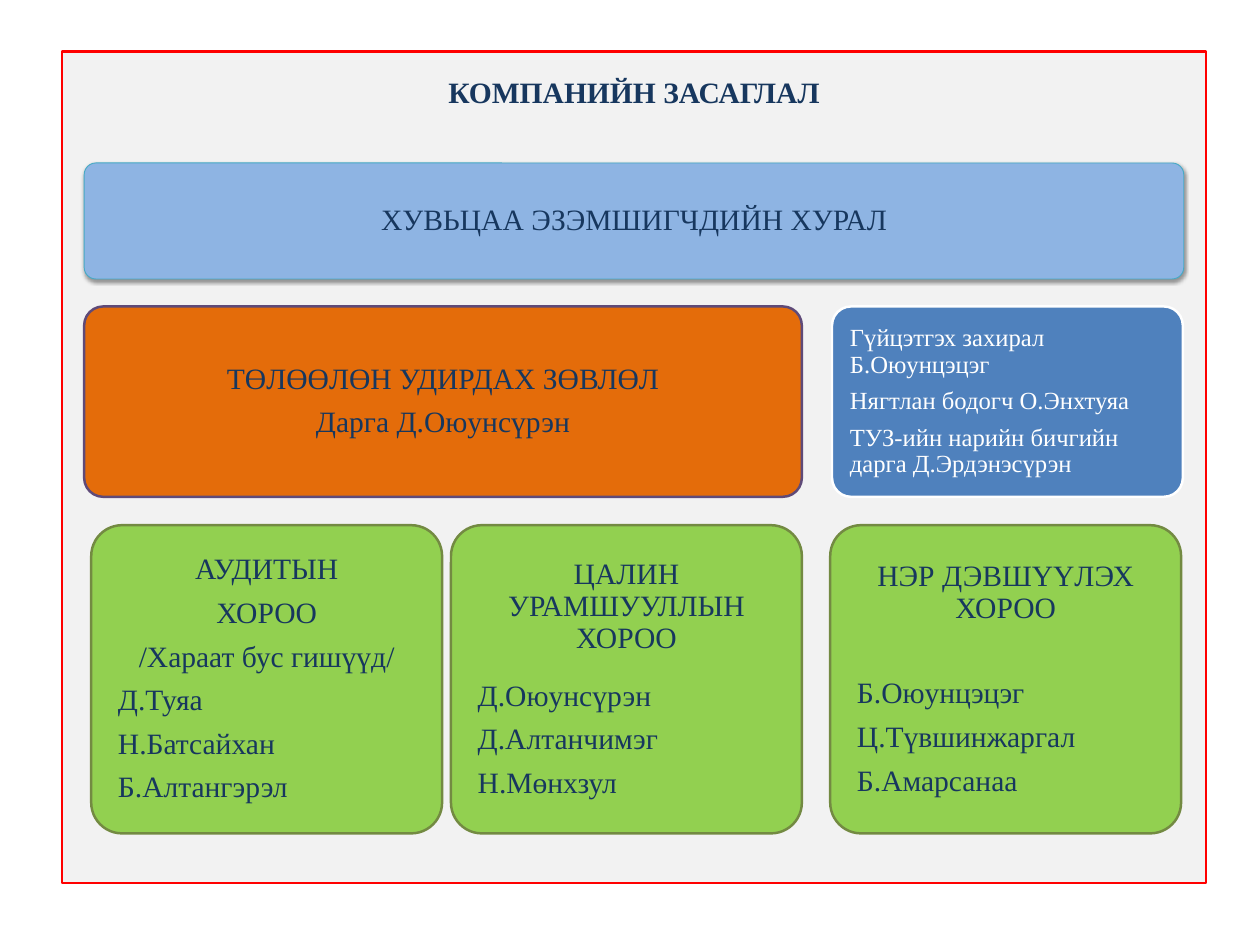
from lxml import etree
from pptx import Presentation
from pptx.dml.color import RGBColor
from pptx.enum.shapes import MSO_SHAPE
from pptx.enum.text import MSO_ANCHOR, MSO_AUTO_SIZE, PP_ALIGN
from pptx.oxml.ns import qn
from pptx.util import Inches, Pt

NAVY, WHITE, GREEN, OLIVE = "17375E", "FFFFFF", "92D050", "738A42"


def hue(code):
    return RGBColor.from_string(code)


def write(frame, lines, size=24, color=NAVY, bold=False, heads=0, gap=0,
          lead=1.0, split=None, pad=0.2, top=0.1, anchor=MSO_ANCHOR.MIDDLE):
    """Centre the first `heads` lines, left-align the rest; `split` is the gap after the heads."""
    frame.word_wrap = True
    frame.auto_size = MSO_AUTO_SIZE.NONE
    frame.vertical_anchor = anchor
    frame.margin_left = frame.margin_right = Inches(pad)
    frame.margin_top = frame.margin_bottom = Inches(top)
    for i, line in enumerate(lines):
        para = frame.paragraphs[0] if i == 0 else frame.add_paragraph()
        para.alignment = PP_ALIGN.CENTER if i < heads else PP_ALIGN.LEFT
        para.line_spacing = lead
        para.space_before = Pt(0)
        last = i == len(lines) - 1
        para.space_after = Pt(0 if last else split if split and i == heads - 1 else gap)
        run = para.add_run()
        run.text = line
        font = run.font
        font.name, font.size, font.bold = "Times New Roman", Pt(size), bold
        font.color.rgb = hue(color)


deck = Presentation()
deck.slide_width, deck.slide_height = Inches(14.22), Inches(10.67)
slide = deck.slides.add_slide(deck.slide_layouts[5])

# The title is also the framed panel behind the boxes
title = slide.shapes.title
title.left, title.top = Inches(0.7), Inches(0.58)
title.width, title.height = Inches(12.91), Inches(9.39)
title.fill.solid()
title.fill.fore_color.rgb = hue("F2F2F2")
title.line.color.rgb = hue("FF0000")
title.line.width = Pt(2.25)
write(title.text_frame, ["КОМПАНИЙН ЗАСАГЛАЛ"], bold=True, heads=1,
      top=0.26, anchor=MSO_ANCHOR.TOP)

# Rows: top and height; columns: left edges and width
HEAD, BOARD, TEAM = (1.84, 1.31), (3.46, 2.15), (5.93, 3.48)
COLS, WIDE = (1.03, 5.09, 9.37), 3.96
LEFT = 0.95

boxes = [
    (LEFT, HEAD, 12.41, "8EB4E3", "46AAC5", 0.75,
     ["ХУВЬЦАА ЭЗЭМШИГЧДИЙН ХУРАЛ"], dict(heads=1)),
    (LEFT, BOARD, COLS[1] + WIDE - LEFT, "E46C0A", "5F4A78", 2,
     ["ТӨЛӨӨЛӨН УДИРДАХ ЗӨВЛӨЛ", "Дарга Д.Оюунсүрэн"], dict(heads=2)),
    (COLS[2] + 0.02, BOARD, WIDE, "4F81BD", WHITE, 2,
     ["Гүйцэтгэх захирал Б.Оюунцэцэг", "Нягтлан бодогч О.Энхтуяа",
      "ТУЗ-ийн нарийн бичгийн дарга Д.Эрдэнэсүрэн"],
     dict(size=20, color=WHITE, gap=8, pad=0.14)),
]
teams = [
    (["АУДИТЫН", "ХОРОО", "/Хараат бус гишүүд/",
      "Д.Туяа", "Н.Батсайхан", "Б.Алтангэрэл"], 3, None),
    (["ЦАЛИН УРАМШУУЛЛЫН ХОРОО",
      "Д.Оюунсүрэн", "Д.Алтанчимэг", "Н.Мөнхзул"], 1, 21.5),
    (["НЭР ДЭВШҮҮЛЭХ ХОРОО",
      "Б.Оюунцэцэг", "Ц.Түвшинжаргал", "Б.Амарсанаа"], 1, 43.5),
]
for left, (lines, heads, split) in zip(COLS, teams):
    boxes.append((left, TEAM, WIDE, GREEN, OLIVE, 2, lines,
                  dict(heads=heads, split=split)))

cards = []
for left, (top, high), wide, fill, edge, thick, lines, form in boxes:
    card = slide.shapes.add_shape(MSO_SHAPE.ROUNDED_RECTANGLE, Inches(left),
                                  Inches(top), Inches(wide), Inches(high))
    card.adjustments[0] = 0.1
    card.shadow.inherit = False
    card.fill.solid()
    card.fill.fore_color.rgb = hue(fill)
    card.line.color.rgb = hue(edge)
    card.line.width = Pt(thick)
    write(card.text_frame, lines, **{"gap": 9.5, "lead": 0.9, **form})
    cards.append(card)

# Soft shadow below the top box
effect = cards[0]._element.spPr.find(qn("a:effectLst"))
shade = etree.SubElement(effect, qn("a:outerShdw"), blurRad=str(Pt(3.1)),
                         dist=str(Pt(1.6)), dir="5400000", rotWithShape="0")
tint = etree.SubElement(shade, qn("a:srgbClr"), val="000000")
etree.SubElement(tint, qn("a:alpha"), val="38000")

deck.save("out.pptx")
